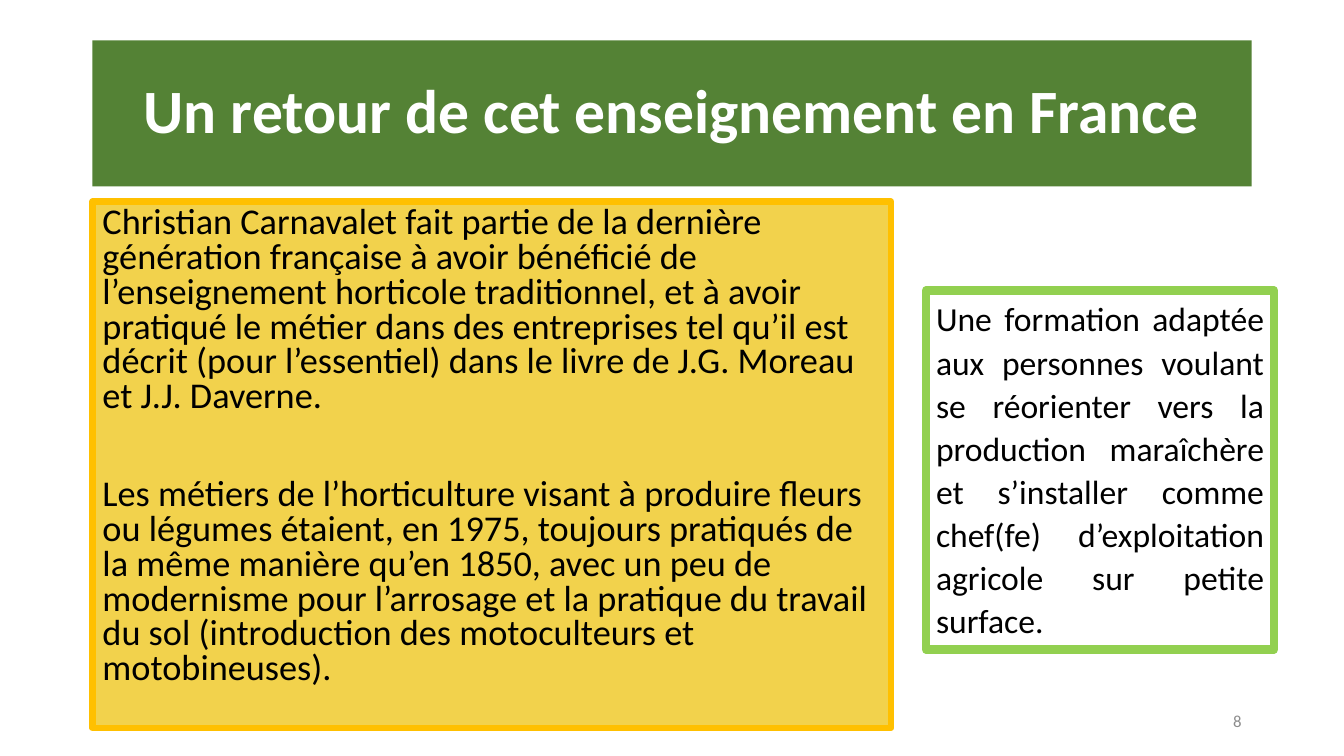
from lxml.etree import SubElement
from pptx import Presentation
from pptx.dml.color import RGBColor
from pptx.enum.shapes import MSO_SHAPE
from pptx.enum.text import MSO_ANCHOR, MSO_AUTO_SIZE, PP_ALIGN
from pptx.oxml.ns import qn
from pptx.util import Pt

TITLE = "Un retour de cet enseignement en France"
STORY = [
    "Christian Carnavalet fait partie de la dernière génération française à avoir "
    "bénéficié de l’enseignement horticole traditionnel, et à avoir pratiqué le métier "
    "dans des entreprises tel qu’il est décrit (pour l’essentiel) dans le livre de "
    "J.G. Moreau et J.J. Daverne.",
    "Les métiers de l’horticulture visant à produire fleurs ou légumes étaient, en 1975, "
    "toujours pratiqués de la même manière qu’en 1850, avec un peu de modernisme pour "
    "l’arrosage et la pratique du travail du sol (introduction des motoculteurs et "
    "motobineuses).",
]
COURSE = (
    "Une formation adaptée aux personnes voulant se réorienter vers la production "
    "maraîchère et s’installer comme chef(fe) d’exploitation agricole sur petite surface."
)


def color(code):
    """Turn a hex string into a colour."""
    return RGBColor.from_string(code)


def place(shape, left, top, width, height):
    """Set the place and size of a shape in points."""
    shape.left, shape.top = Pt(left), Pt(top)
    shape.width, shape.height = Pt(width), Pt(height)


def paint(shape, fill=None, line=None, weight=0):
    """Set the fill and outline of a shape."""
    if fill:
        shape.fill.solid()
        shape.fill.fore_color.rgb = color(fill)
    else:
        shape.fill.background()
    if line:
        shape.line.color.rgb = color(line)
        shape.line.width = Pt(weight)
    else:
        shape.line.fill.background()


def write(shape, texts, size, ink="000000", bold=False, align=PP_ALIGN.LEFT,
          anchor=MSO_ANCHOR.TOP, spacing=1.0, gap=0, after=0):
    """Fill a shape with formatted paragraphs without bullets."""
    frame = shape.text_frame
    frame.word_wrap = True
    frame.auto_size = MSO_AUTO_SIZE.NONE
    frame.vertical_anchor = anchor
    for index, text in enumerate(texts):
        para = frame.add_paragraph() if index else frame.paragraphs[0]
        para.text = text
        props = para._p.get_or_add_pPr()
        props.set("marL", "0")
        props.set("indent", "0")
        SubElement(props, qn("a:buNone"))
        para.alignment = align
        para.line_spacing = spacing
        para.space_before = Pt(gap if index else 0)
        para.space_after = Pt(after)
        font = para.runs[0].font
        font.name, font.size, font.bold = "Calibri", Pt(size), bold
        font.color.rgb = color(ink)


def add_panel(slide, box, line, weight):
    """Add an outlined rectangle without fill."""
    panel = slide.shapes.add_shape(MSO_SHAPE.RECTANGLE, *map(Pt, box))
    panel.shadow.inherit = False
    paint(panel, line=line, weight=weight)
    return panel


def main():
    """Build the slide and save it."""
    deck = Presentation()
    deck.slide_width, deck.slide_height = Pt(960), Pt(540)
    slide = deck.slides.add_slide(deck.slide_layouts[1])

    title, body = slide.placeholders
    place(title, 66, 28.8, 828, 104.4)
    paint(title, fill="548235")
    write(title, [TITLE], 44, ink="FFFFFF", bold=True, align=PP_ALIGN.CENTER,
          anchor=MSO_ANCHOR.MIDDLE, spacing=0.9)

    place(body, 66, 144, 570.5, 376)
    paint(body, fill="F2D24C", line="FFC000", weight=4.5)
    write(body, STORY, 25.9, spacing=0.8, gap=45)

    number = slide.shapes.add_textbox(Pt(678), Pt(500.5), Pt(216), Pt(28.8))
    write(number, ["8"], 12, ink="8C8C8C", align=PP_ALIGN.RIGHT,
          anchor=MSO_ANCHOR.MIDDLE)

    course = add_panel(slide, (661.5, 207.5, 248.5, 256.5), "92D050", 6)
    write(course, [COURSE], 24, align=PP_ALIGN.JUSTIFY, spacing=1.07, after=8)

    deck.save("out.pptx")


if __name__ == "__main__":
    main()
